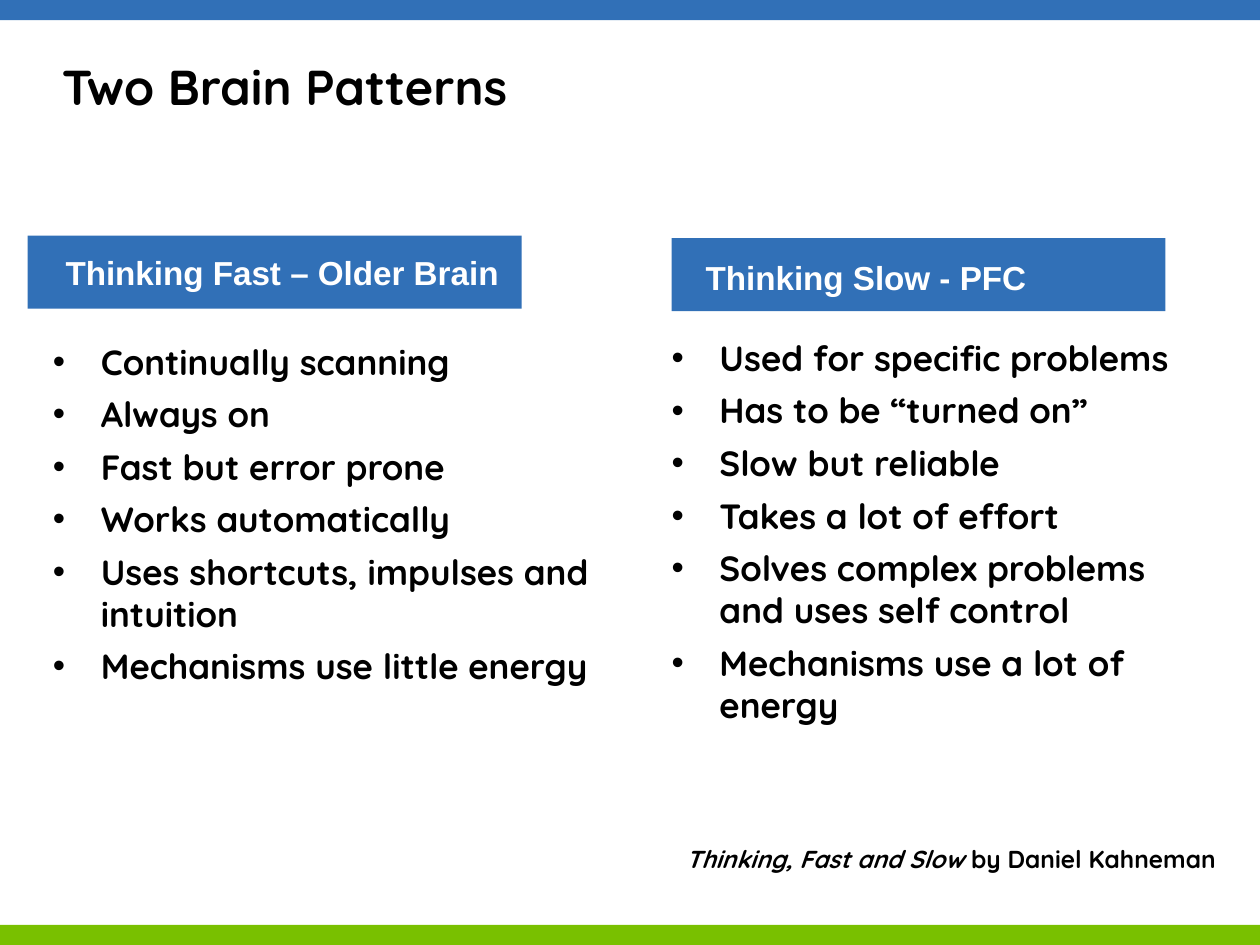
from dataclasses import dataclass

import pptx
import pptx.dml.color
import pptx.enum.shapes
import pptx.enum.text
import pptx.oxml.ns
import pptx.util
from lxml import etree

PX = 9144  # EMU, 100 px to the inch
COLORS = {"blue": "3170B7", "green": "79C000", "black": "000000", "white": "FFFFFF"}
BODY_FONT = "Quicksand"
INDENT = 38


@dataclass(frozen=True)
class Box:
    left: int
    top: int
    width: int
    height: int

    def emu(self) -> tuple[int, ...]:
        return tuple(value * PX for value in (self.left, self.top, self.width, self.height))


@dataclass(frozen=True)
class Column:
    heading: str
    heading_box: Box
    heading_inset: Box  # margins: left, top, right, bottom
    list_box: Box
    items: tuple[str, ...]


BARS = ((Box(0, 0, 1000, 16), "blue"), (Box(0, 734, 1000, 16), "green"))

COLUMNS = (
    Column(
        "Thinking Fast – Older Brain",
        Box(22, 187, 392, 58),
        Box(30, 0, 0, 0),
        Box(42, 270, 438, 384),
        (
            "Continually scanning",
            "Always on",
            "Fast but error prone",
            "Works automatically",
            "Uses shortcuts, impulses and intuition",
            "Mechanisms use little energy",
        ),
    ),
    Column(
        "Thinking Slow - PFC",
        Box(533, 189, 392, 58),
        Box(27, 4, 0, 0),
        Box(533, 267, 435, 425),
        (
            "Used for specific problems",
            "Has to be “turned on”",
            "Slow but reliable",
            "Takes a lot of effort",
            "Solves complex problems and uses self control",
            "Mechanisms use a lot of energy",
        ),
    ),
)


def set_up_frame(frame, margins: Box, anchor) -> None:
    frame.word_wrap = True
    frame.auto_size = pptx.enum.text.MSO_AUTO_SIZE.NONE
    frame.vertical_anchor = anchor
    (frame.margin_left, frame.margin_top,
     frame.margin_right, frame.margin_bottom) = margins.emu()


def add_run(paragraph, text: str, size: int, color: str = "black",
            font: str = BODY_FONT, italic: bool = False) -> None:
    run = paragraph.add_run()
    run.text = text
    run.font.name = font
    run.font.size = pptx.util.Pt(size)
    run.font.bold = True
    run.font.italic = italic
    run.font.color.rgb = pptx.dml.color.RGBColor.from_string(COLORS[color])


def add_rectangle(slide, box: Box, color: str):
    shape = slide.shapes.add_shape(pptx.enum.shapes.MSO_SHAPE.RECTANGLE, *box.emu())
    shape.shadow.inherit = False
    shape.fill.solid()
    shape.fill.fore_color.rgb = pptx.dml.color.RGBColor.from_string(COLORS[color])
    shape.line.fill.background()
    return shape


def add_bullet(paragraph) -> None:
    properties = paragraph._p.get_or_add_pPr()
    properties.set("marL", str(INDENT * PX))
    properties.set("indent", str(-INDENT * PX))
    font = etree.SubElement(properties, pptx.oxml.ns.qn("a:buFont"))
    font.set("typeface", "Arial")
    bullet = etree.SubElement(properties, pptx.oxml.ns.qn("a:buChar"))
    bullet.set("char", "•")


def add_column(slide, column: Column) -> None:
    heading = add_rectangle(slide, column.heading_box, "blue")
    set_up_frame(heading.text_frame, column.heading_inset,
                 pptx.enum.text.MSO_ANCHOR.MIDDLE)
    paragraph = heading.text_frame.paragraphs[0]
    paragraph.alignment = pptx.enum.text.PP_ALIGN.LEFT
    add_run(paragraph, column.heading, 19, "white", "Arial")

    frame = slide.shapes.add_textbox(*column.list_box.emu()).text_frame
    set_up_frame(frame, Box(0, 0, 0, 0), pptx.enum.text.MSO_ANCHOR.TOP)
    for index, item in enumerate(column.items):
        paragraph = frame.add_paragraph() if index else frame.paragraphs[0]
        add_bullet(paragraph)
        if index:
            paragraph.space_before = pptx.util.Pt(6)
        add_run(paragraph, item, 20)


def add_title(slide, text: str) -> None:
    title = slide.shapes.title
    title.left, title.top, title.width, title.height = Box(49, 52, 901, 105).emu()
    set_up_frame(title.text_frame, Box(0, 0, 0, 0), pptx.enum.text.MSO_ANCHOR.TOP)
    paragraph = title.text_frame.paragraphs[0]
    paragraph.alignment = pptx.enum.text.PP_ALIGN.LEFT
    paragraph.line_spacing = 0.85
    add_run(paragraph, text, 28)


def add_citation(slide) -> None:
    frame = slide.shapes.add_textbox(*Box(500, 665, 475, 57).emu()).text_frame
    set_up_frame(frame, Box(10, 5, 10, 5), pptx.enum.text.MSO_ANCHOR.TOP)
    paragraph = frame.paragraphs[0]
    paragraph.alignment = pptx.enum.text.PP_ALIGN.RIGHT
    add_run(paragraph, "Thinking, Fast and Slow ", 14, italic=True)
    add_run(paragraph, "by Daniel Kahneman", 14)


def main() -> None:
    presentation = pptx.Presentation()
    presentation.slide_width = 1000 * PX
    presentation.slide_height = 750 * PX
    slide = presentation.slides.add_slide(presentation.slide_layouts[5])
    for box, color in BARS:
        add_rectangle(slide, box, color)
    add_title(slide, "Two Brain Patterns")
    for column in COLUMNS:
        add_column(slide, column)
    add_citation(slide)
    presentation.save("out.pptx")


if __name__ == "__main__":
    main()
